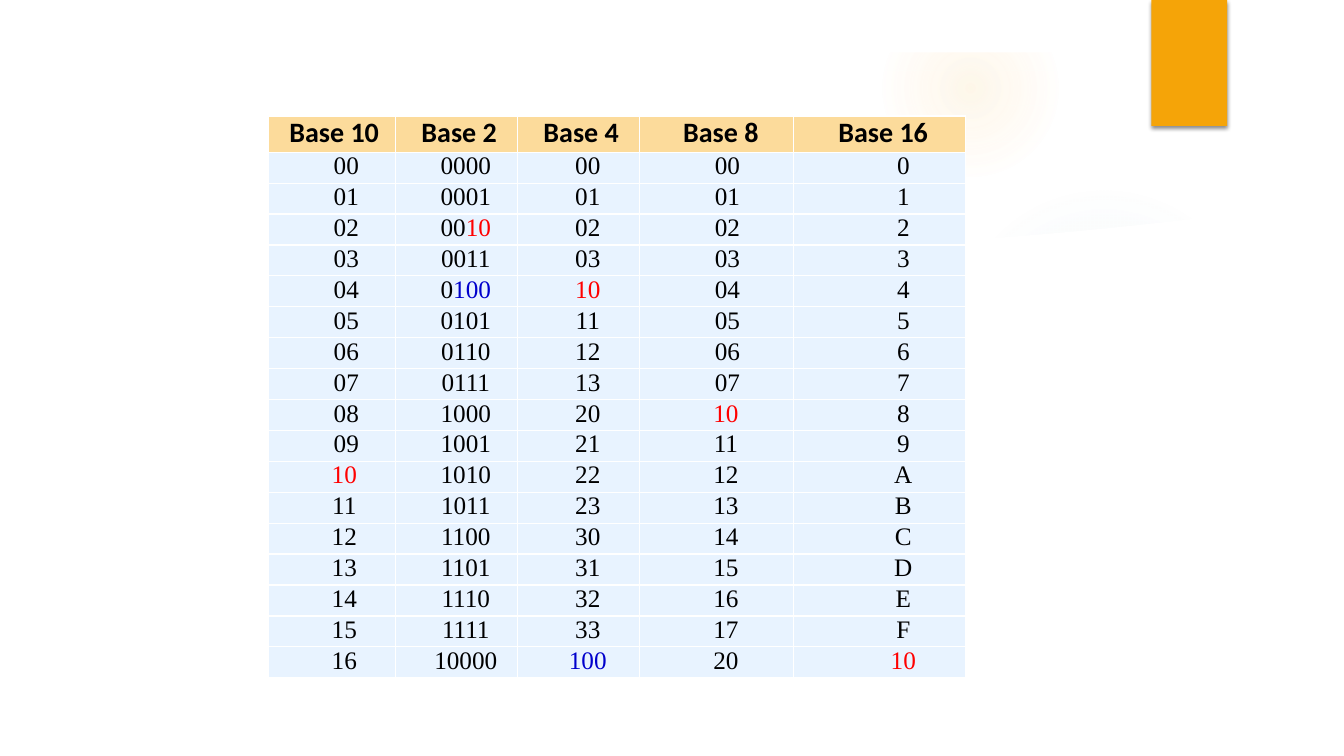
"""Build a slide that counts from 0 to 16 in five number bases."""
from lxml import etree
from pptx import Presentation
from pptx import util as u
from pptx.dml.color import RGBColor
from pptx.enum import shapes, text
from pptx.oxml import parse_xml
from pptx.oxml.ns import nsdecls, qn

WHITE = RGBColor(0xFF, 0xFF, 0xFF)
BLACK = RGBColor(0, 0, 0)
RED = RGBColor(0xFF, 0, 0)
BLUE = RGBColor(0, 0, 0xCC)
ORANGE = RGBColor(0xF5, 0xA4, 0x08)
AMBER = RGBColor(0xFA, 0xC9, 0x6A)
MIST = RGBColor(0x8E, 0xBB, 0xD2)
HEADER = RGBColor(0xFC, 0xDB, 0x9B)
BODY = RGBColor(0xE8, 0xF3, 0xFF)

BASES = [10, 2, 4, 8, 16]
COLUMN_WIDTHS = [1.26, 1.21, 1.21, 1.53, 1.71]
HEADER_INDENTS = [0.05, 0.06, 0.06, 0.09, 0.07]
BODY_INDENTS = [0.29, 0.19, 0.19, 0.22, 0.47]
LATE_INDENTS = {10: 0.25, 8: 0.19}
DIGIT_COUNTS = {10: 2, 2: 4, 4: 2, 8: 2, 16: 1}
LAST_NUMBER = 16
HEADER_HEIGHT, TABLE_HEIGHT = 0.36, 5.58


def numeral(number, base):
    digits = ""
    while number:
        number, digit = divmod(number, base)
        digits = "0123456789ABCDEF"[digit] + digits
    return digits.rjust(DIGIT_COUNTS[base], "0")


def numeral_spans(number, base):
    digits = numeral(number, base)
    if number == base:
        tail, color = 2, RED
    elif number == base ** 2:
        tail, color = 3, BLUE
    else:
        return [(digits, BLACK)]
    pairs = [(digits[:-tail], BLACK), (digits[-tail:], color)]
    return [pair for pair in pairs if pair[0]]


class SlideBuilder:
    def __init__(self, deck):
        self.header_font, self.header_size = "Calibri", u.Pt(20)
        self.body_font, self.body_size = "Times New Roman", u.Pt(18)
        self.slide = deck.slides.add_slide(deck.slide_layouts[6])

    def finish(self, shape, color):
        shape.shadow.inherit = False
        shape.fill.solid()
        shape.fill.fore_color.rgb = color
        shape.line.fill.background()
        return shape

    def preset(self, kind, left, top, width, height, color):
        shape = self.slide.shapes.add_shape(
            kind, u.Inches(left), u.Inches(top), u.Inches(width), u.Inches(height))
        return self.finish(shape, color)

    def outline(self, points, color):
        places = [(u.Inches(x), u.Inches(y)) for x, y in points]
        builder = self.slide.shapes.build_freeform(*places[0])
        builder.add_line_segments(places[1:], close=True)
        return self.finish(builder.convert_to_shape(), color)

    def glow(self, left, top, size, color, stops):
        shape = self.preset(shapes.MSO_SHAPE.OVAL, left, top, size, size, color)
        marks = "".join(
            f'<a:gs pos="{place * 1000}"><a:srgbClr val="{color}">'
            f'<a:alpha val="{alpha * 1000}"/></a:srgbClr></a:gs>'
            for place, alpha in stops)
        gradient = parse_xml(
            f'<a:gradFill {nsdecls("a")}><a:gsLst>{marks}</a:gsLst><a:path path="circle">'
            '<a:fillToRect l="50000" t="50000" r="50000" b="50000"/></a:path></a:gradFill>')
        properties = shape.element.spPr
        properties.replace(properties.find(qn("a:solidFill")), gradient)

    def drop_shadow(self, shape):
        effects = shape.element.spPr.find(qn("a:effectLst"))
        effects.append(parse_xml(
            f'<a:outerShdw {nsdecls("a")} blurRad="{u.Pt(3)}" dist="{u.Pt(2)}" dir="5400000">'
            '<a:srgbClr val="000000"><a:alpha val="45000"/></a:srgbClr></a:outerShdw>'))

    def set_alpha(self, shape, percent):
        color = shape.element.spPr.find(qn("a:solidFill"))[0]
        etree.SubElement(color, qn("a:alpha")).set("val", str(percent * 1000))

    def table(self, left, top, widths, rows):
        frame = self.slide.shapes.add_table(
            rows, len(widths), u.Inches(left), u.Inches(top),
            u.Inches(sum(widths)), u.Inches(TABLE_HEIGHT))
        table = frame.table
        table.horz_banding = False
        for column, width in zip(table.columns, widths):
            column.width = u.Inches(width)
        for row in table.rows:
            row.height = u.Inches((TABLE_HEIGHT - HEADER_HEIGHT) / (rows - 1))
        table.rows[0].height = u.Inches(HEADER_HEIGHT)
        return table

    def cell(self, cell, spans, indent, header=False):
        cell.margin_left = cell.margin_right = cell.margin_top = cell.margin_bottom = 0
        properties = cell._tc.get_or_add_tcPr()
        for side in ("L", "R", "T", "B"):
            properties.append(parse_xml(
                f'<a:ln{side} {nsdecls("a")} w="{u.Pt(1)}"><a:solidFill>'
                f'<a:srgbClr val="{WHITE}"/></a:solidFill></a:ln{side}>'))
        cell.fill.solid()
        cell.fill.fore_color.rgb = HEADER if header else BODY
        para = cell.text_frame.paragraphs[0]
        para.alignment = text.PP_ALIGN.CENTER
        para_properties = para._p.get_or_add_pPr()
        para_properties.set("marL", str(u.Inches(indent)))
        para_properties.set("indent", "0")
        for words, color in spans:
            span = para.add_run()
            span.text = words
            span.font.name = self.header_font if header else self.body_font
            span.font.size = self.header_size if header else self.body_size
            span.font.bold = header
            span.font.color.rgb = color


def add_backdrop(page):
    page.glow(9.41, 1.83, 3.08, MIST, [(0, 7), (36, 6), (69, 0)])
    page.glow(8.75, 0, 1.75, AMBER, [(0, 14), (36, 7), (73, 0)])
    band = page.outline(
        [(9.34, 2.5), (10.4, 2.45), (11.6, 2.33), (12.89, 2.14), (12.83, 1.66),
         (11.9, 1.94), (10.98, 2.16), (10.1, 2.32), (9.3, 2.43)], WHITE)
    band.rotation = 350.2
    page.set_alpha(band, 20)
    left, right, steps = 0.5, 12.84, 40
    middle, half = (left + right) / 2, (right - left) / 2
    stations = [right - (right - left) * step / steps for step in range(steps + 1)]
    curve = [(x, 2.48 - 0.44 * ((x - middle) / half) ** 2) for x in stations]
    page.outline([(left, 7), (right, 7)] + curve, WHITE)
    border = page.preset(shapes.MSO_SHAPE.FRAME, 0, 0, 13.33, 7.5, WHITE)
    border.adjustments[0] = 0.52 / 7.5
    ribbon = page.preset(shapes.MSO_SHAPE.RECTANGLE, 11.42, 0, 0.75, 1.25, ORANGE)
    page.drop_shadow(ribbon)


def add_base_table(page):
    table = page.table(2.66, 1.15, COLUMN_WIDTHS, LAST_NUMBER + 2)
    for column, base in enumerate(BASES):
        page.cell(table.cell(0, column), [(f"Base {base}", BLACK)],
                  HEADER_INDENTS[column], header=True)
        for number in range(LAST_NUMBER + 1):
            indent = BODY_INDENTS[column]
            if number >= base:
                indent = LATE_INDENTS.get(base, indent)
            page.cell(table.cell(number + 1, column), numeral_spans(number, base), indent)


def main():
    deck = Presentation()
    deck.slide_width, deck.slide_height = u.Inches(13.33), u.Inches(7.5)
    page = SlideBuilder(deck)
    add_backdrop(page)
    add_base_table(page)
    deck.save("out.pptx")


if __name__ == "__main__":
    main()
